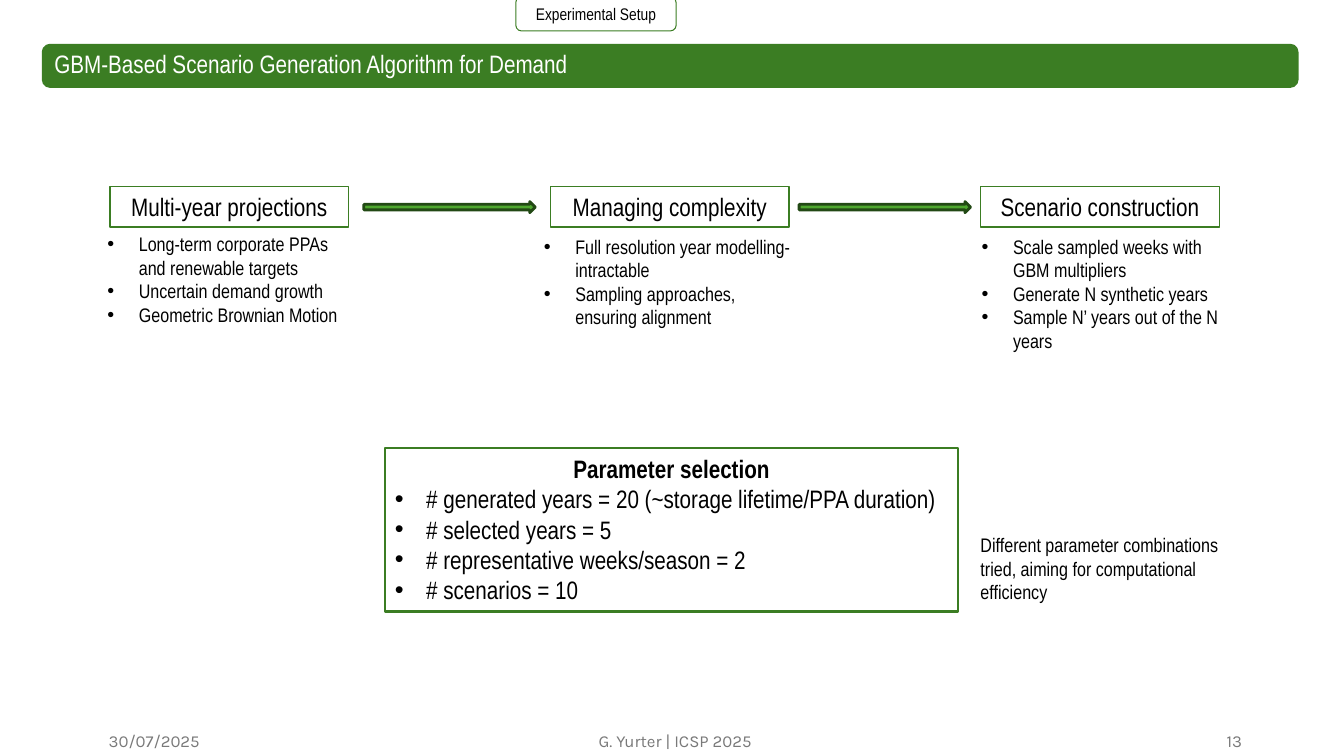
from lxml.etree import SubElement
from pptx import Presentation
from pptx.dml.color import RGBColor
from pptx.enum.shapes import MSO_SHAPE
from pptx.enum.text import MSO_ANCHOR, PP_ALIGN
from pptx.oxml.ns import qn
from pptx.util import Cm, Pt

SECTION = "Experimental Setup"
TITLE = "GBM-Based Scenario Generation Algorithm for Demand"
STEPS = [
    {"name": "Multi-year projections", "left": 2.77, "list_at": (2.46, 5.72), "points": [
        "Long-term corporate PPAs and renewable targets",
        "Uncertain demand growth",
        "Geometric Brownian Motion"]},
    {"name": "Managing complexity", "left": 13.87, "list_at": (13.46, 5.79), "points": [
        "Full resolution year modelling-intractable",
        "Sampling approaches, ensuring alignment"]},
    {"name": "Scenario construction", "left": 24.71, "list_at": (24.49, 5.79), "points": [
        "Scale sampled weeks with GBM multipliers",
        "Generate N synthetic years",
        "Sample N’ years out of the N years"]},
]
PARAMETER_HEADING = "Parameter selection"
PARAMETERS = [
    "# generated years = 20 (~storage lifetime/PPA duration)",
    "# selected years = 5",
    "# representative weeks/season = 2",
    "# scenarios = 10",
]
NOTE = "Different parameter combinations tried, aiming for computational efficiency"
FOOTERS = [
    ("30/07/2025", 2.49, 7.62, PP_ALIGN.LEFT),
    ("G. Yurter | ICSP 2025", 11.3, 11.43, PP_ALIGN.CENTER),
    ("13", 23.93, 7.62, PP_ALIGN.RIGHT),
]

THEME = {
    "green": "3B7D23", "arrow": "4EA72E", "arrow_edge": "224914",
    "ink": "000000", "white": "FFFFFF", "grey": "797979",
    "body_font": "Arial Narrow", "footer_font": "Karla",
    "large": 18, "medium": 14, "small": 12,
}
STEP_TOP, STEP_WIDTH, STEP_HEIGHT = 4.7, 6.02, 1.02
ARROW_WIDTH, ARROW_HEIGHT = 4.32, 0.28
LIST_WIDTH = 6.81
INDENT = 0.79


def add_panel(page, kind, area, line, weight, fill=None):
    panel = page.shapes.add_shape(kind, *map(Cm, area))
    panel.shadow.inherit = False
    if fill:
        panel.fill.solid()
        panel.fill.fore_color.rgb = RGBColor.from_string(THEME[fill])
    else:
        panel.fill.background()
    panel.line.color.rgb = RGBColor.from_string(THEME[line])
    panel.line.width = Pt(weight)
    return panel


def add_label(page, area):
    return page.shapes.add_textbox(*map(Cm, area))


def add_bullet(para):
    properties = para._p.get_or_add_pPr()
    properties.set("marL", str(Cm(INDENT)))
    properties.set("indent", str(-Cm(INDENT)))
    SubElement(properties, qn("a:buFont")).set("typeface", "Arial")
    SubElement(properties, qn("a:buChar")).set("char", "•")


def write(box, lines, size, align=PP_ALIGN.LEFT, color="ink", font="body_font",
          anchor=MSO_ANCHOR.TOP, bullets=False, heading=None):
    frame = box.text_frame
    frame.word_wrap = True
    frame.vertical_anchor = anchor
    entries = [(heading, True)] if heading else []
    entries += [(line, False) for line in lines]
    for index, (line, is_heading) in enumerate(entries):
        para = frame.add_paragraph() if index else frame.paragraphs[0]
        para.alignment = PP_ALIGN.CENTER if is_heading else align
        if bullets and not is_heading:
            add_bullet(para)
        span = para.add_run()
        span.text = line
        formats = {"name": THEME[font], "size": Pt(THEME[size]), "bold": is_heading}
        for name, value in formats.items():
            setattr(span.font, name, value)
        span.font.color.rgb = RGBColor.from_string(THEME[color])


def add_steps(page):
    for step in STEPS:
        area = (step["left"], STEP_TOP, STEP_WIDTH, STEP_HEIGHT)
        box = add_panel(page, MSO_SHAPE.RECTANGLE, area, "green", 1)
        write(box, [step["name"]], "large", PP_ALIGN.CENTER)
        points = add_label(page, (*step["list_at"], LIST_WIDTH, 2.64))
        write(points, step["points"], "medium", bullets=True)
    for before, after in zip(STEPS, STEPS[1:]):
        middle = (before["left"] + STEP_WIDTH + after["left"]) / 2
        area = (middle - ARROW_WIDTH / 2, 5.08, ARROW_WIDTH, ARROW_HEIGHT)
        add_panel(page, MSO_SHAPE.RIGHT_ARROW, area, "arrow_edge", 2, "arrow")


def add_parameters(page):
    box = add_panel(page, MSO_SHAPE.RECTANGLE, (9.7, 11.3, 14.45, 4.11), "green", 1.5)
    write(box, PARAMETERS, "large", PP_ALIGN.JUSTIFY, bullets=True,
          heading=PARAMETER_HEADING)
    write(add_label(page, (24.46, 13.31, LIST_WIDTH, 2.06)), [NOTE], "medium")


def add_frame(page):
    add_panel(page, MSO_SHAPE.ROUNDED_RECTANGLE, (1.09, 1.14, 31.6, 1.04),
              "green", 2, "green")
    write(add_label(page, (1.12, 1.09, 31.52, 1.02)), [TITLE], "large", color="white")
    tab = add_panel(page, MSO_SHAPE.ROUNDED_RECTANGLE, (13, -0.08, 4.04, 0.86),
                    "green", 0.75)
    write(tab, [SECTION], "small", PP_ALIGN.CENTER)
    for text, left, width, align in FOOTERS:
        write(add_label(page, (left, 18.16, width, 1.02)), [text], "small", align,
              "grey", "footer_font", MSO_ANCHOR.MIDDLE)


def main():
    deck = Presentation()
    deck.slide_width, deck.slide_height = Cm(33.87), Cm(19.05)
    page = deck.slides.add_slide(deck.slide_layouts[6])
    add_frame(page)
    add_steps(page)
    add_parameters(page)
    deck.save("out.pptx")


if __name__ == "__main__":
    main()
